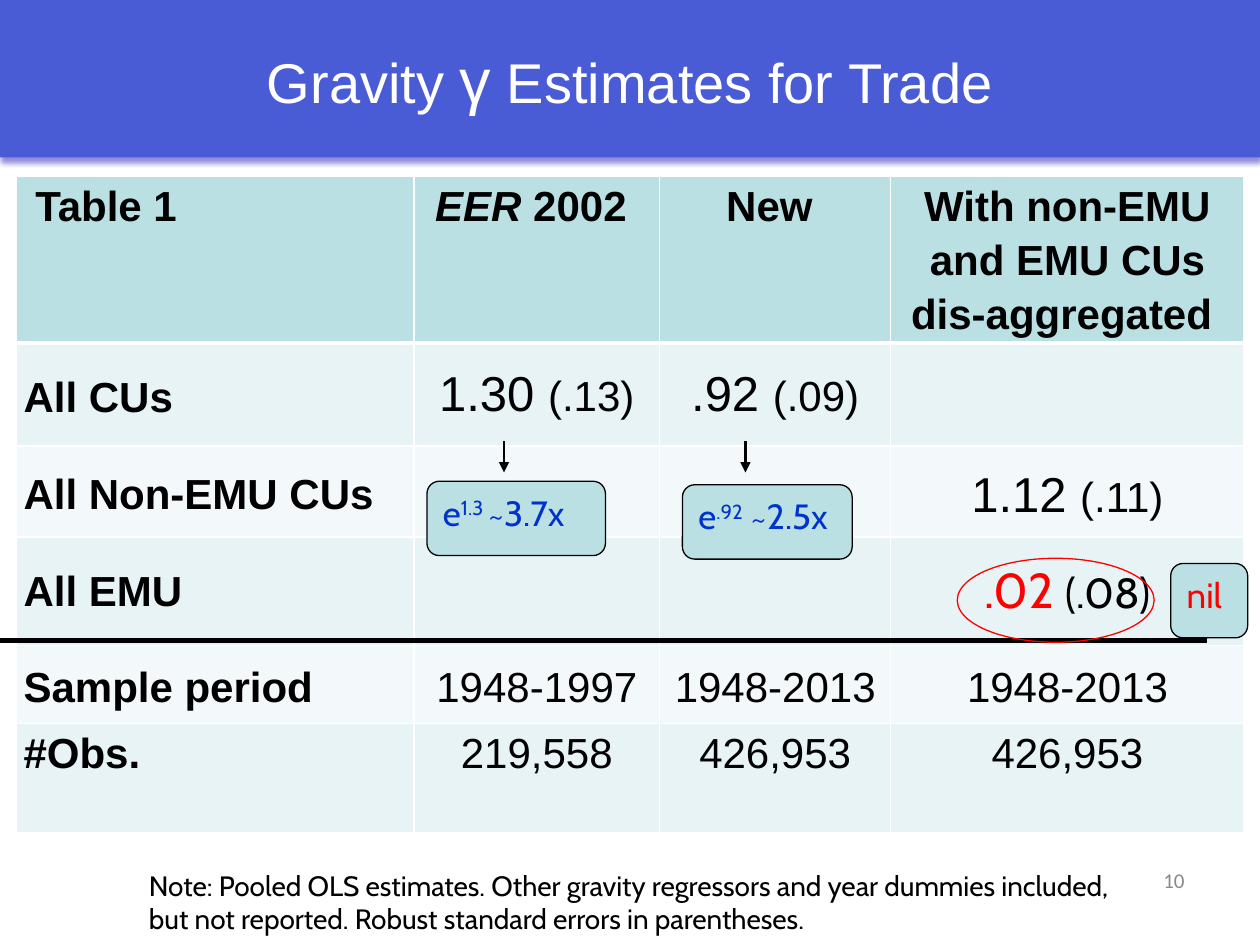
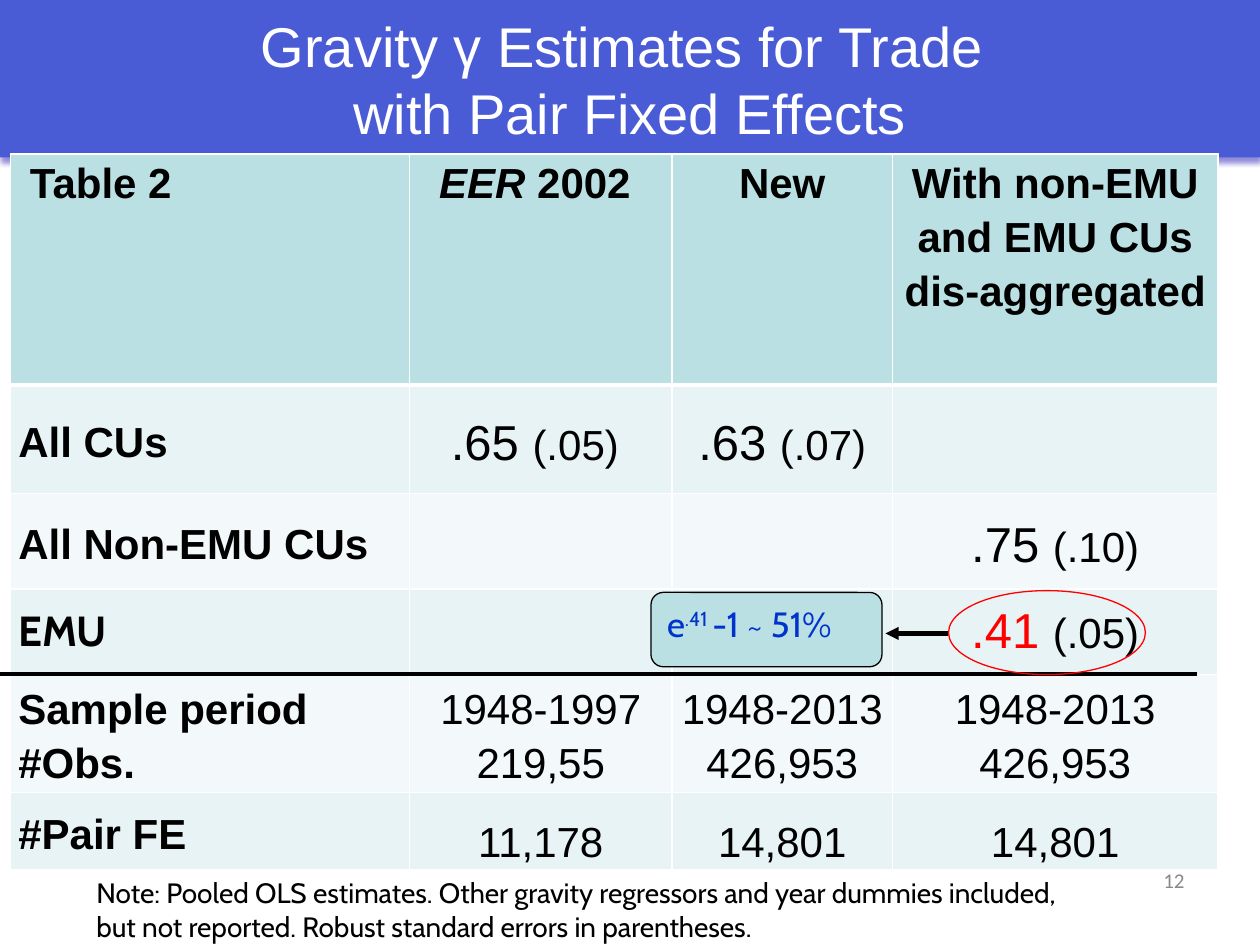
from dataclasses import dataclass
from typing import NamedTuple

from lxml.etree import SubElement
from pptx import Presentation
from pptx.dml.color import RGBColor
from pptx.enum.shapes import MSO_CONNECTOR, MSO_SHAPE
from pptx.enum.text import MSO_ANCHOR, PP_ALIGN
from pptx.oxml.ns import qn
from pptx.slide import Slide
from pptx.util import Pt

WHITE, BLACK, RED, BLUE, GREY = "FFFFFF", "000000", "FF0000", "0033CC", "898989"
BAND, GLOW = "4A5BD6", "4A3FC0"
TEAL, PALE, LIGHT = "BBE0E3", "E7F3F4", "F3F9FA"
LEFT, MID, RIGHT = PP_ALIGN.LEFT, PP_ALIGN.CENTER, PP_ALIGN.RIGHT
TOP, HALF = MSO_ANCHOR.TOP, MSO_ANCHOR.MIDDLE
BOX_H = 42.5
NOTE = ("Note: Pooled OLS estimates. Other gravity regressors and year dummies included, "
        "but not reported. Robust standard errors in parentheses.")


class Area(NamedTuple):
    left: float
    top: float
    width: float
    height: float


class Run(NamedTuple):
    text: str
    size: float = 24
    font: str = "Arial"
    color: str = BLACK
    bold: bool = False
    slant: bool = False
    raised: bool = False


Line = tuple[Run, ...]


@dataclass
class Cell:
    lines: tuple[Line, ...] = ()
    align: PP_ALIGN = MID
    anchor: MSO_ANCHOR = HALF
    gap: float = 1.15


@dataclass
class Row:
    height: float
    cells: list[Cell]


@dataclass
class Grid:
    left: float
    top: float
    widths: list[float]
    rows: list[Row]


@dataclass
class Arrow:
    start: tuple[float, float]
    end: tuple[float, float]
    weight: float


@dataclass
class Box:
    left: float
    top: float
    width: float
    runs: Line


@dataclass
class Page:
    title: Line
    grid: Grid
    number: str
    note: Area
    rule: tuple[float, float]
    arrows: list[Arrow]
    boxes: list[Box]
    ring: tuple[float, float]


def rgb(code: str) -> RGBColor:
    return RGBColor.from_string(code)


def write(frame, lines: tuple[Line, ...], align=LEFT, anchor=TOP, gap: float = 1) -> None:
    frame.word_wrap = True
    frame.vertical_anchor = anchor
    for count, line in enumerate(lines):
        para = frame.add_paragraph() if count else frame.paragraphs[0]
        para.alignment = align
        para.line_spacing = gap
        for part in line:
            if part.text == "\n":
                para.add_line_break()
                continue
            run = para.add_run()
            run.text = part.text
            font = run.font
            font.size, font.name = Pt(part.size), part.font
            font.bold, font.italic = part.bold, part.slant
            font.color.rgb = rgb(part.color)
            if part.raised:
                run._r.get_or_add_rPr().set("baseline", "30000")


def add_form(slide: Slide, kind: MSO_SHAPE, area: Area, fill: str = "", edge: str = ""):
    shape = slide.shapes.add_shape(kind, *map(Pt, area))
    shape.shadow.inherit = False
    if fill:
        shape.fill.solid()
        shape.fill.fore_color.rgb = rgb(fill)
    else:
        shape.fill.background()
    if edge:
        shape.line.color.rgb = rgb(edge)
        shape.line.width = Pt(0.75)
    else:
        shape.line.fill.background()
    return shape


def add_text(slide: Slide, area: Area, run: Run, align=LEFT) -> None:
    write(slide.shapes.add_textbox(*map(Pt, area)).text_frame, ((run,),), align)


def add_band(slide: Slide, title: Line) -> None:
    band = add_form(slide, MSO_SHAPE.RECTANGLE, Area(0, 0, 720, 90), BAND)
    glow = SubElement(band._element.spPr.find(qn("a:effectLst")), qn("a:outerShdw"),
                      blurRad=str(Pt(3)), dist=str(Pt(3)), dir="5400000", rotWithShape="0")
    tint = SubElement(glow, qn("a:srgbClr"), val=GLOW)
    SubElement(tint, qn("a:alpha"), val="60000")
    write(band.text_frame, (title,), MID, HALF)


def add_line(slide: Slide, line: Arrow, head: bool = True) -> None:
    link = slide.shapes.add_connector(MSO_CONNECTOR.STRAIGHT, *map(Pt, line.start + line.end))
    link.line.color.rgb = rgb(BLACK)
    link.line.width = Pt(line.weight)
    if head:
        SubElement(link.line._get_or_add_ln(), qn("a:tailEnd"), type="triangle")
    SubElement(link._element.spPr, qn("a:effectLst"))


def add_edge(cell, side: str, weight: float) -> None:
    edge = SubElement(cell._tc.get_or_add_tcPr(), qn(f"a:ln{side}"), w=str(Pt(weight)))
    SubElement(SubElement(edge, qn("a:solidFill")), qn("a:srgbClr"), val=WHITE)


def add_grid(slide: Slide, grid: Grid) -> None:
    area = Area(grid.left, grid.top, sum(grid.widths), sum(row.height for row in grid.rows))
    table = slide.shapes.add_table(len(grid.rows), len(grid.widths), *map(Pt, area)).table
    table.first_row = table.horz_banding = False
    for column, width in zip(table.columns, grid.widths):
        column.width = Pt(width)
    for y, row in enumerate(grid.rows):
        table.rows[y].height = Pt(row.height)
        for x, item in enumerate(row.cells):
            cell = table.cell(y, x)
            cell.margin_left = cell.margin_right = Pt(4.5)
            cell.margin_top = cell.margin_bottom = Pt(0)
            weights = {"L": 1, "R": 1, "T": 3 if y == 1 else 1, "B": 3 if y == 0 else 1}
            for side, weight in weights.items():
                add_edge(cell, side, weight)
            cell.fill.solid()
            cell.fill.fore_color.rgb = rgb(TEAL if y == 0 else PALE if y % 2 else LIGHT)
            write(cell.text_frame, item.lines, item.align, item.anchor, item.gap)
            cell.vertical_anchor = item.anchor


def head(*runs: Run, align=MID) -> Cell:
    return Cell((runs,), align, TOP)


def heads(name: str, new: str) -> list[Cell]:
    return [
        head(Run(f" {name}", bold=True), align=LEFT),
        head(Run("EER", bold=True, slant=True), Run(" 2002 ", bold=True)),
        head(Run(new, bold=True)),
        head(Run("With non-EMU and EMU CUs dis-aggregated ", bold=True)),
    ]


def label(*texts: str, gap: float = 1.15, font: str = "Arial", anchor=HALF) -> Cell:
    return Cell(tuple((Run(text, font=font, bold=True),) for text in texts), LEFT, anchor, gap)


def plain(*texts: str, gap: float = 1.15, anchor=HALF) -> Cell:
    return Cell(tuple((Run(text),) for text in texts), MID, anchor, gap)


def score(value: str, error: str, gap: float = 1.15, font: str = "Arial",
          color: str = BLACK) -> Cell:
    return Cell(((Run(f"{value} ", 28, font, color), Run(error, 24, font)),), gap=gap)


def power(index: str, rest: str) -> Line:
    base = Run("e", 20, "Cabin", BLUE)
    return base, base._replace(text=index, raised=True), base._replace(text=rest)


def title(text: str, size: float = 32) -> Run:
    return Run(text, size, color=WHITE)


def build(deck, page: Page) -> None:
    slide = deck.slides.add_slide(deck.slide_layouts[6])
    add_band(slide, page.title)
    add_grid(slide, page.grid)
    add_text(slide, Area(516, 492, 168, 37), Run(page.number, 12, "Calibri", GREY), RIGHT)
    add_text(slide, page.note, Run(NOTE, 16, "Cabin"))
    width, level = page.rule
    add_line(slide, Arrow((0, level), (width, level), 2.5), head=False)
    for arrow in page.arrows:
        add_line(slide, arrow)
    for box in page.boxes:
        area = Area(box.left, box.top, box.width, BOX_H)
        shape = add_form(slide, MSO_SHAPE.ROUNDED_RECTANGLE, area, TEAL, BLACK)
        write(shape.text_frame, (box.runs,))
    add_form(slide, MSO_SHAPE.OVAL, Area(*page.ring, 112.5, 48), edge=RED)


PAGES = [
    Page(
        (title("Gravity "), title("γ", 36), title(" Estimates for Trade")),
        Grid(9, 101, [227.5, 140.5, 132, 202], [
            Row(95, heads("Table 1", "New ")),
            Row(59, [label("All CUs"), score("1.30", "(.13)", 1), score(".92", "(.09)", 1),
                     Cell()]),
            Row(52, [label("All Non-EMU CUs"), Cell(), Cell(), score("1.12", "(.11)")]),
            Row(62, [label("All EMU", gap=1), Cell(), Cell(),
                     score(".02", "(.08)", 1, "Cabin", RED)]),
            Row(44.5, [label("Sample period"),
                       *map(plain, ("1948-1997", "1948-2013", "1948-2013"))]),
            Row(62.5, [label("#Obs.", anchor=TOP),
                       *(plain(text, anchor=TOP) for text in ("219,558", "426,953", "426,953"))]),
        ]),
        "10", Area(78, 492.5, 564, 46), (690, 366),
        [Arrow((x, 252), (x, 270), 1.5) for x in (288, 426)],
        [Box(244, 275, 102, power("1.3 ", "~3.7x")),
         Box(390, 277, 97, power(".92", " ~2.5x")),
         Box(669, 322, 44, (Run("nil", 20, "Cabin", RED),))],
        (547, 319),
    ),
    Page(
        (title("Gravity γ Estimates for Trade "), title("\n"), title("with Pair Fixed Effects")),
        Grid(6, 88, [228, 150, 126, 186], [
            Row(132, heads("Table 2", "New")),
            Row(62, [label("All CUs"), score(".65", "(.05) "), score(".63", "(.07)"), Cell()]),
            Row(54.5, [label("All Non-EMU CUs"), Cell(), Cell(), score(".75", "(.10)")]),
            Row(49, [label("EMU", gap=1, font="Cabin"), Cell(), Cell(),
                     score(".41", "(.05)", 1, color=RED)]),
            Row(67.5, [label("Sample period", "#Obs."), plain("1948-1997", "219,55"),
                       *(plain("1948-2013", "426,953") for _ in range(2))]),
            Row(44, [label("#Pair FE"),
                     *(plain(text, gap=1.5) for text in ("11,178", "14,801", "14,801"))]),
        ]),
        "12", Area(48, 497, 588, 46), (684, 385),
        [Arrow((542, 362), (506, 362), 2.5)],
        [Box(372, 338.5, 132, power(".41 ", "-1 ~ 51%"))],
        (542, 337.5),
    ),
]


def main() -> None:
    deck = Presentation()
    deck.slide_width, deck.slide_height = Pt(720), Pt(540)
    for page in PAGES:
        build(deck, page)
    deck.save("out.pptx")


if __name__ == "__main__":
    main()
